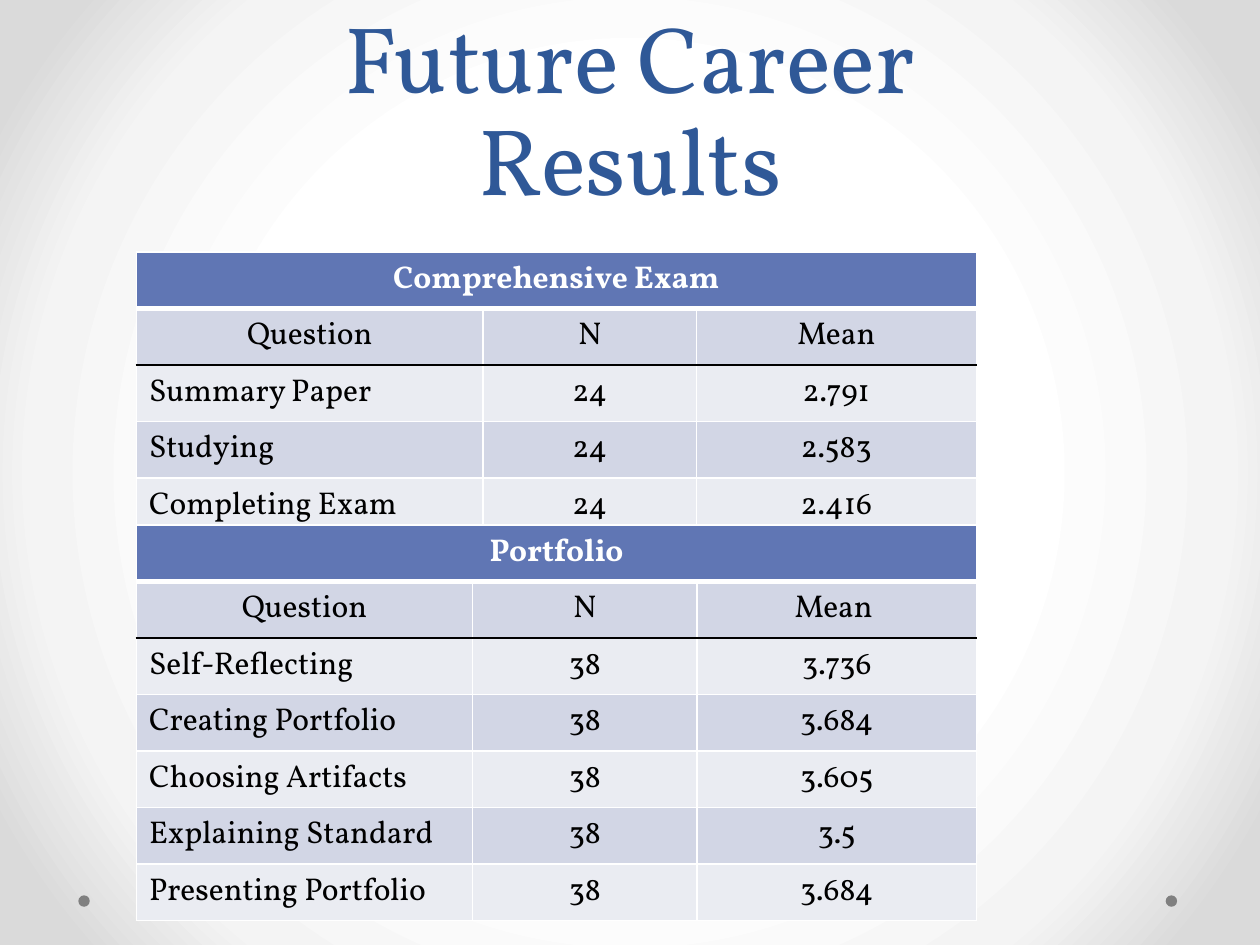
from lxml.etree import SubElement
from pptx import Presentation
from pptx.dml.color import RGBColor
from pptx.enum.text import MSO_ANCHOR, PP_ALIGN
from pptx.enum.shapes import MSO_SHAPE
from pptx.oxml.ns import qn
from pptx.util import Cm, Pt

FONT = "Vollkorn"
WHITE = RGBColor(0xFF, 0xFF, 0xFF)
BLACK = RGBColor(0x00, 0x00, 0x00)
TITLE_BLUE = RGBColor(0x2F, 0x58, 0x97)
HEADER_BLUE = RGBColor(0x60, 0x76, 0xB4)
DARK_BAND = RGBColor(0xD2, 0xD6, 0xE5)
LIGHT_BAND = RGBColor(0xEA, 0xEC, 0xF2)
DOT_GRAY = RGBColor(0x80, 0x80, 0x80)
BACKDROP_STOPS = [
    (50, WHITE),
    (76, RGBColor(0xF4, 0xF4, 0xF4)),
    (92, RGBColor(0xDA, 0xDA, 0xDA)),
]

ROW_HEIGHT = 1.14
EXAM_RESULTS = [
    ("Question", "N", "Mean"),
    ("Summary Paper", "24", "2.791"),
    ("Studying", "24", "2.583"),
    ("Completing Exam", "24", "2.416"),
]
PORTFOLIO_RESULTS = [
    ("Question", "N", "Mean "),
    ("Self-Reflecting", "38", "3.736"),
    ("Creating Portfolio", "38", "3.684"),
    ("Choosing Artifacts", "38", "3.605"),
    ("Explaining Standard", "38", "3.5"),
    ("Presenting Portfolio", "38", "3.684"),
]


def write(frame, text, size=18, color=BLACK, bold=False,
          align=PP_ALIGN.CENTER, line_spacing=None):
    """Put formatted text in the first paragraph of a text frame."""
    paragraph = frame.paragraphs[0]
    paragraph.text = text
    paragraph.alignment = align
    if line_spacing:
        paragraph.line_spacing = Pt(line_spacing)
    for run in paragraph.runs:
        run.font.name = FONT
        run.font.size = Pt(size)
        run.font.bold = bold
        run.font.color.rgb = color


def paint_backdrop(slide):
    """Fill the slide background with a circular gradient."""
    slide.background.fill.gradient()
    gradient = slide.element.find(".//" + qn("a:gradFill"))
    for child in list(gradient):
        gradient.remove(child)
    stops = SubElement(gradient, qn("a:gsLst"))
    for position, color in BACKDROP_STOPS:
        stop = SubElement(stops, qn("a:gs"), pos=str(position * 1000))
        SubElement(stop, qn("a:srgbClr"), val=str(color))
    circle = SubElement(gradient, qn("a:path"), path="circle")
    SubElement(circle, qn("a:fillToRect"), l="50000", t="50000", r="50000", b="50000")


def add_corner_dots(slide, left, top, width, size):
    """Place a dot at each end of the given strip."""
    for dot_left in (left, left + width - size):
        dot = slide.shapes.add_shape(
            MSO_SHAPE.OVAL, Cm(dot_left), Cm(top), Cm(size), Cm(size))
        dot.shadow.inherit = False
        dot.fill.solid()
        dot.fill.fore_color.rgb = DOT_GRAY
        dot.line.fill.background()


def add_title(slide, left, top, width, height):
    """Place the slide title at the bottom of its box."""
    title = slide.shapes.add_textbox(Cm(left), Cm(top), Cm(width), Cm(height))
    title.text_frame.word_wrap = True
    title.text_frame.vertical_anchor = MSO_ANCHOR.BOTTOM
    write(title.text_frame, "Future Career\vResults", size=54,
          color=TITLE_BLUE, line_spacing=58)


def style_cell(cell, fill, top, bottom):
    """Draw the four borders of a cell and fill it."""
    properties = cell._tc.get_or_add_tcPr()
    side = (WHITE, 1)
    for tag, (color, width) in zip(("lnL", "lnR", "lnT", "lnB"),
                                   (side, side, top, bottom)):
        border = SubElement(properties, qn("a:" + tag), w=str(Pt(width)))
        solid = SubElement(border, qn("a:solidFill"))
        SubElement(solid, qn("a:srgbClr"), val=str(color))
    cell.fill.solid()
    cell.fill.fore_color.rgb = fill


def add_results_table(slide, left, top, column_widths, heading, results):
    """Place a results table with a merged heading row."""
    rows = [(heading, "", "")] + results
    table = slide.shapes.add_table(
        len(rows), len(column_widths), Cm(left), Cm(top),
        Cm(sum(column_widths)), Cm(ROW_HEIGHT * len(rows))).table
    table.first_row = table.horz_banding = False
    for column, width in zip(table.columns, column_widths):
        column.width = Cm(width)
    table.cell(0, 0).merge(table.cell(0, len(column_widths) - 1))

    rules = [(WHITE, 1), (WHITE, 3), (BLACK, 1)] + [(WHITE, 1)] * len(results)
    for r, values in enumerate(rows):
        table.rows[r].height = Cm(ROW_HEIGHT)
        band = DARK_BAND if r % 2 else LIGHT_BAND
        for c, value in enumerate(values):
            cell = table.cell(r, c)
            style_cell(cell, HEADER_BLUE if r == 0 else band, rules[r], rules[r + 1])
            if value:
                write(cell.text_frame, value,
                      color=WHITE if r == 0 else BLACK, bold=r == 0,
                      align=PP_ALIGN.LEFT if r > 1 and c == 0 else PP_ALIGN.CENTER)


def main():
    """Build and save the slide."""
    presentation = Presentation()
    presentation.slide_width = Cm(25.4)
    presentation.slide_height = Cm(19.05)
    slide = presentation.slides.add_slide(presentation.slide_layouts[6])
    paint_backdrop(slide)
    add_corner_dots(slide, 1.58, 18.05, 22.15, 0.23)
    add_title(slide, 1.27, 0, 22.86, 4.44)
    add_results_table(slide, 2.75, 5.08, (6.99, 4.3, 5.64),
                      "Comprehensive Exam", EXAM_RESULTS)
    add_results_table(slide, 2.75, 10.58, (6.78, 4.52, 5.64),
                      "Portfolio", PORTFOLIO_RESULTS)
    presentation.save("out.pptx")


if __name__ == "__main__":
    main()
